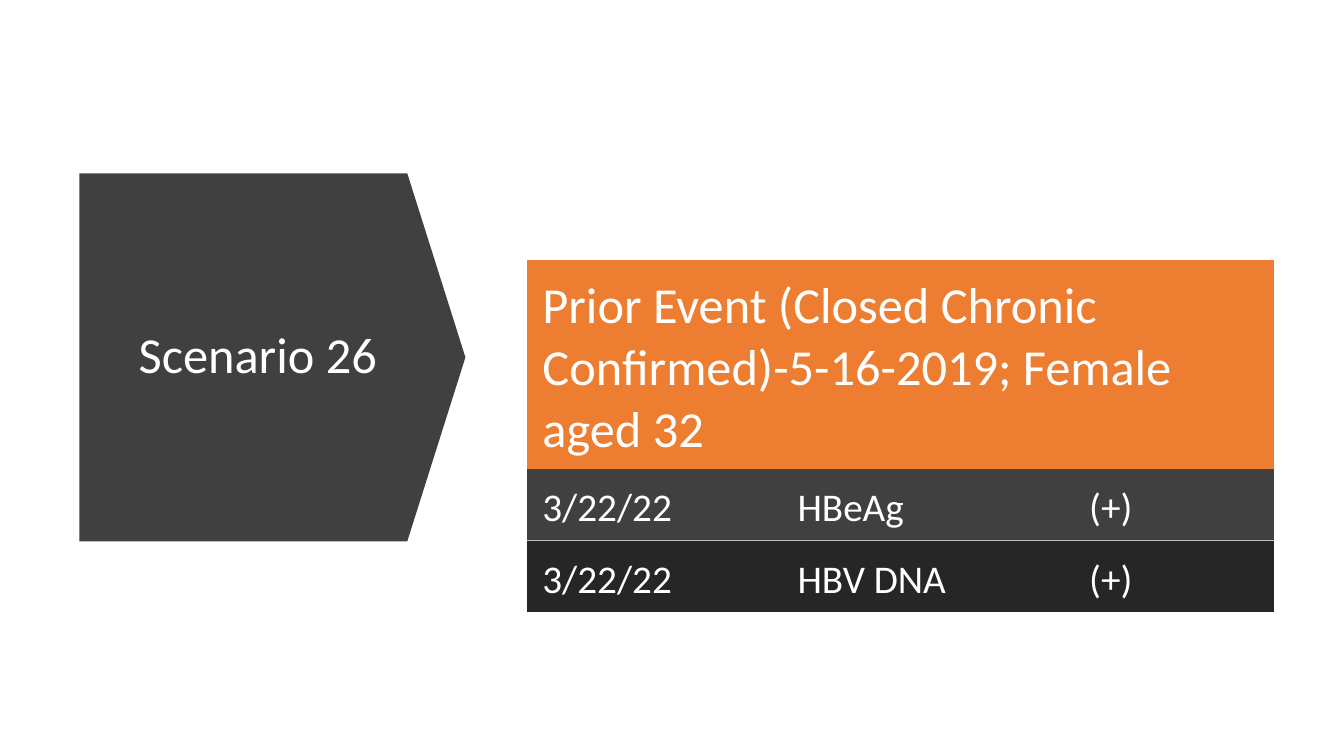
from typing import NamedTuple

from lxml import etree
from pptx import Presentation
from pptx import util as u
from pptx.dml.color import RGBColor
from pptx.enum import shapes, text
from pptx.oxml import ns

WHITE = RGBColor(0xFF, 0xFF, 0xFF)
ORANGE = RGBColor(0xED, 0x7D, 0x31)
GREY = RGBColor(0x40, 0x40, 0x40)
DARK = RGBColor(0x26, 0x26, 0x26)
RULE = RGBColor(0xBF, 0xBF, 0xBF)
FONT = "Calibri"
NO_STYLE = "{2D5ABB26-0587-4C30-8999-92F81FD0307C}"
COL_WIDTHS = (6.43, 7.35, 5.06)


class Row(NamedTuple):
    values: tuple[str, ...]
    height: float
    size: int
    fill: RGBColor
    anchor: text.MSO_ANCHOR = text.MSO_ANCHOR.TOP
    rule: str | None = None


ROWS = (
    Row(("Prior Event (Closed Chronic Confirmed)-5-16-2019; Female aged 32",),
        5.2, 36, ORANGE, text.MSO_ANCHOR.MIDDLE),
    Row(("3/22/22", "HBeAg", "(+)"), 1.75, 28, GREY, rule="a:lnB"),
    Row(("3/22/22", "HBV DNA", "(+)"), 1.75, 28, DARK, rule="a:lnT"),
)


def write(tf, words: str, *, size: int, align=text.PP_ALIGN.LEFT,
          spacing: float = 1.0) -> None:
    p = tf.paragraphs[0]
    p.alignment = align
    p.line_spacing = spacing
    r = p.add_run()
    r.text = words
    r.font.size = u.Pt(size)
    r.font.name = FONT
    r.font.color.rgb = WHITE


def add_rule(cell, side: str) -> None:
    """Draw a thin line on one side of a cell; side is a:lnT or a:lnB."""
    ln = etree.Element(ns.qn(side), w=str(u.Pt(1)))
    fill = etree.SubElement(ln, ns.qn("a:solidFill"))
    etree.SubElement(fill, ns.qn("a:srgbClr"), val=str(RULE))
    cell._tc.get_or_add_tcPr().insert(0, ln)


def add_scenario(slide) -> None:
    sp = slide.shapes.add_shape(shapes.MSO_SHAPE.PENTAGON,
                                u.Cm(2), u.Cm(4.37), u.Cm(9.73), u.Cm(9.27))
    sp.adjustments[0] = 0.158
    sp.shadow.inherit = False
    sp.fill.solid()
    sp.fill.fore_color.rgb = GREY
    sp.line.fill.background()
    tf = sp.text_frame
    tf.word_wrap = True
    tf.vertical_anchor = text.MSO_ANCHOR.MIDDLE
    write(tf, "Scenario 26", size=36, align=text.PP_ALIGN.CENTER, spacing=0.9)


def add_results(slide) -> None:
    frame = slide.shapes.add_table(
        len(ROWS), len(COL_WIDTHS), u.Cm(13.27), u.Cm(6.55),
        u.Cm(sum(COL_WIDTHS)), u.Cm(sum(row.height for row in ROWS)))
    table = frame.table
    table.first_row = table.horz_banding = False
    table._tbl.tblPr.find(ns.qn("a:tableStyleId")).text = NO_STYLE
    for column, width in zip(table.columns, COL_WIDTHS):
        column.width = u.Cm(width)
    table.cell(0, 0).merge(table.cell(0, len(COL_WIDTHS) - 1))

    for i, row in enumerate(ROWS):
        table.rows[i].height = u.Cm(row.height)
        for j, value in enumerate(row.values):
            cell = table.cell(i, j)
            cell.margin_left = cell.margin_right = cell.margin_top = u.Cm(0.4)
            cell.margin_bottom = u.Cm(0.2)
            cell.vertical_anchor = row.anchor
            cell.fill.solid()
            cell.fill.fore_color.rgb = row.fill
            write(cell.text_frame, value, size=row.size)
            if row.rule:
                add_rule(cell, row.rule)


def main() -> None:
    prs = Presentation()
    prs.slide_width, prs.slide_height = u.Cm(33.87), u.Cm(19.05)
    slide = prs.slides.add_slide(prs.slide_layouts[6])
    add_scenario(slide)
    add_results(slide)
    prs.save("out.pptx")


if __name__ == "__main__":
    main()
